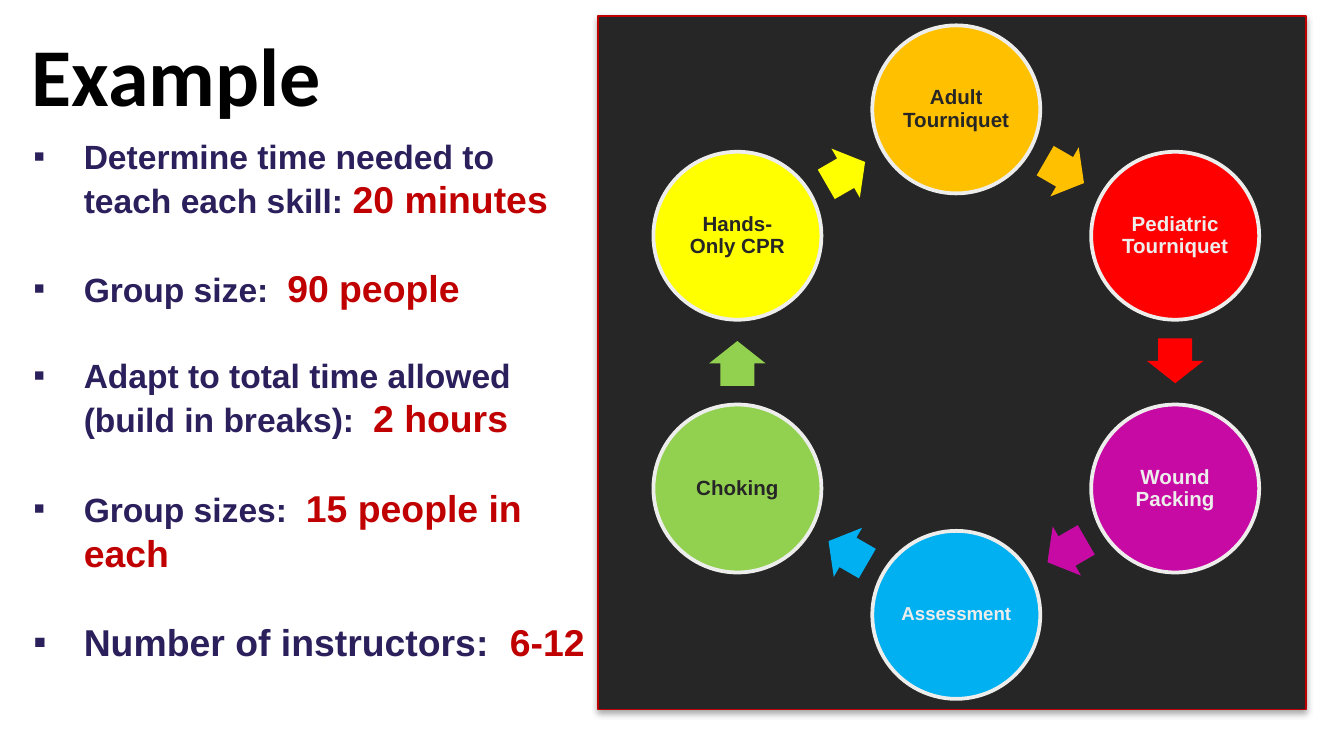
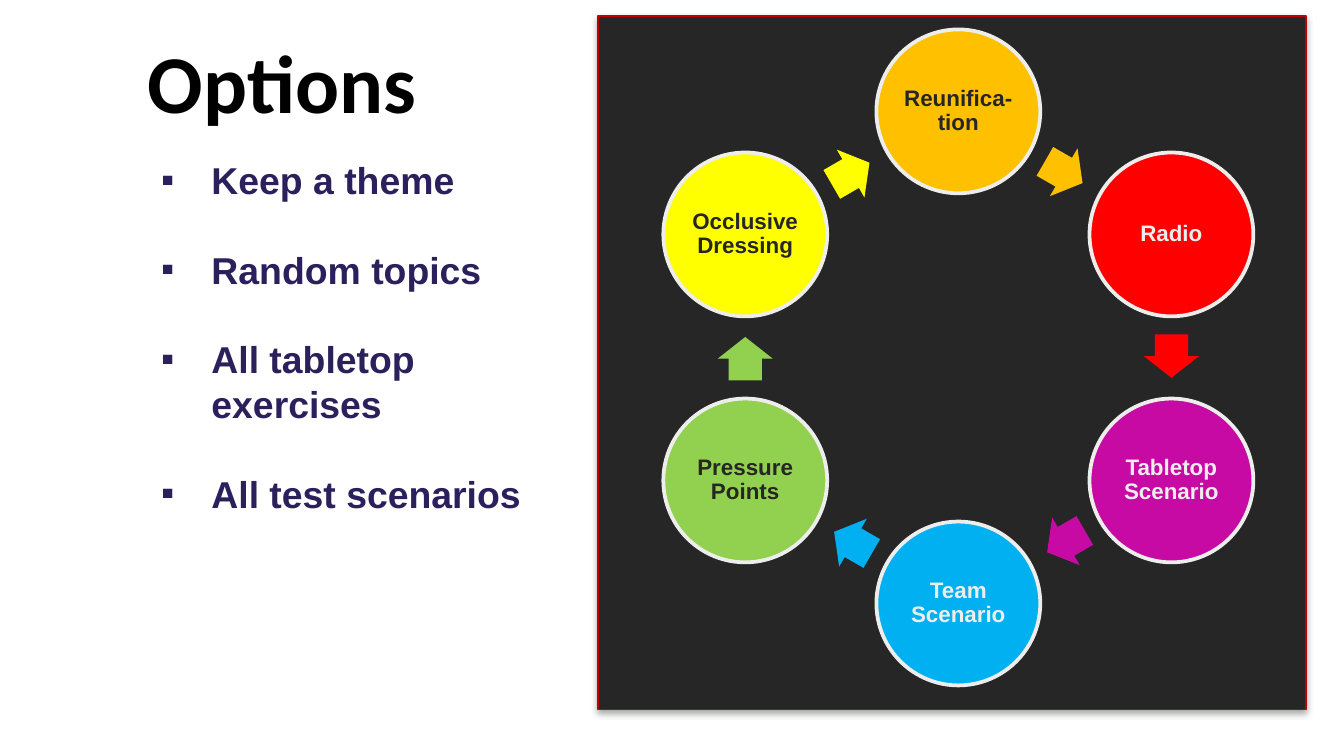
from dataclasses import dataclass
from math import cos, radians, sin

from lxml.etree import SubElement as Sub
from pptx import Presentation
from pptx.dml.color import RGBColor as Rgb
from pptx.enum.shapes import MSO_SHAPE as Kind
from pptx.enum.text import MSO_ANCHOR as Anchor, MSO_AUTO_SIZE as Fit, PP_ALIGN as Align
from pptx.oxml.ns import qn
from pptx.util import Pt


@dataclass(frozen=True)
class Theme:
    head: str = "Calibri"
    body: str = "Arial"
    black: str = "000000"
    navy: str = "2B205C"
    red: str = "C00000"
    dark: str = "262626"
    light: str = "EDEDEC"
    title: int = 44
    big: int = 20
    mid: int = 18
    gap: int = 24
    indent: int = 27
    # Circle fill and the colour of its text, clockwise from the top
    wheel: tuple = (("FFC000", dark), ("FF0000", light), ("C80AA4", light),
                    ("00B0F0", light), ("92D050", dark), ("FFFF00", dark))


T = Theme()
PANEL = (320.4, 8.6, 379.4, 371.5)


def paint(shape, fill, line=None, width=1):
    """Set the fill and line of a shape and drop its shadow."""
    shape.shadow.inherit = False
    shape.fill.solid()
    shape.fill.fore_color.rgb = Rgb.from_string(fill)
    if line:
        shape.line.color.rgb = Rgb.from_string(line)
        shape.line.width = Pt(width)
    else:
        shape.line.fill.background()


def shade(shape):
    """Give a shape a soft shadow straight below it."""
    fx = shape._element.spPr.find(qn("a:effectLst"))
    drop = Sub(fx, qn("a:outerShdw"), blurRad="40000", dist="23000",
               dir="5400000", rotWithShape="0")
    tint = Sub(drop, qn("a:srgbClr"), val=T.black)
    Sub(tint, qn("a:alpha"), val="35000")


def mark(para):
    """Add a hanging square bullet."""
    props = para._p.get_or_add_pPr()
    props.set("marL", str(Pt(T.indent)))
    props.set("indent", str(-Pt(T.indent)))
    Sub(props, qn("a:buFont"), typeface=T.body)
    Sub(props, qn("a:buChar"), char="▪")


def write(shape, paras, size, color, font=T.body, align=Align.CENTER,
          anchor=Anchor.MIDDLE, inset=None, space=None, gap=0, bullet=False):
    """Fill a shape with paragraphs, each a list of (text, size, colour) runs."""
    frame = shape.text_frame
    frame.word_wrap = True
    frame.vertical_anchor = anchor
    if inset is not None:
        frame.margin_left = frame.margin_right = Pt(inset)
        frame.margin_top = frame.margin_bottom = Pt(inset)
    for i, runs in enumerate(paras):
        para = frame.add_paragraph() if i else frame.paragraphs[0]
        if bullet:
            mark(para)
        para.alignment = align
        if space:
            para.line_spacing = space
        if i and gap:
            para.space_before = Pt(gap)
        for text, *style in runs:
            own, tint = style or (size, color)
            run = para.add_run()
            run.text = text
            run.font.name = font
            run.font.bold = True
            run.font.size = Pt(own)
            run.font.color.rgb = Rgb.from_string(tint)


def place(home, kind, x, y, w, h):
    return home.add_shape(kind, Pt(x), Pt(y), Pt(w), Pt(h))


def title(slide, box, text):
    shape = slide.shapes.add_textbox(*map(Pt, box))
    write(shape, [[(text,)]], T.title, T.black, font=T.head)


def points(slide, box, paras):
    shape = slide.shapes.add_textbox(*map(Pt, box))
    write(shape, paras, T.big, T.navy, align=Align.LEFT, anchor=Anchor.TOP,
          gap=T.gap, bullet=True)
    shape.text_frame.auto_size = Fit.SHAPE_TO_FIT_TEXT


def cycle(slide, box, names, mid, radius, size, arrow, font):
    """Draw the dark panel and its ring; mid is relative to the panel."""
    left, top, *_ = box
    panel = place(slide.shapes, Kind.RECTANGLE, *box)
    paint(panel, T.dark, T.red, 0.75)
    shade(panel)

    ring = slide.shapes.add_group_shape().shapes
    cx, cy = left + mid[0], top + mid[1]
    step = 360 / len(names)
    reach = radius * cos(radians(step / 2))
    wide, high = arrow
    back = 0.7  # arrows sit slightly behind the midpoint
    for i, (name, (fill, ink)) in enumerate(zip(names, T.wheel)):
        # Circle
        turn = radians(i * step)
        x, y = cx + radius * sin(turn), cy - radius * cos(turn)
        disc = place(ring, Kind.OVAL, x - size / 2, y - size / 2, size, size)
        paint(disc, fill, T.light, 2)
        text, pt = name if isinstance(name, tuple) else (name, font)
        write(disc, [[(text,)]], pt, ink, inset=1.2, space=0.9)

        # Arrow to the next circle
        angle = (i + 0.5) * step
        turn = radians(angle)
        x = cx + reach * sin(turn) - back * cos(turn)
        y = cy - reach * cos(turn) - back * sin(turn)
        tip = place(ring, Kind.RIGHT_ARROW, x - wide / 2, y - high / 2, wide, high)
        tip.adjustments[0], tip.adjustments[1] = 0.6, 0.5
        tip.rotation = angle
        paint(tip, fill)


def fact(label, value, size=T.mid):
    return [(label, size, T.navy), (value, T.big, T.red)]


def example(slide):
    cycle(slide, PANEL,
          ["Adult Tourniquet", "Pediatric Tourniquet", "Wound Packing",
           ("Assessment", 10), "Choking", "Hands-Only CPR"],
          mid=(191.9, 185.4), radius=135.4, size=90, arrow=(24, 30.4), font=11)
    title(slide, (0, 5.8, 189.4, 67.7), "Example")
    points(slide, (10.8, 69.1, 309.6, 293), [
        fact("Determine time needed to teach each skill: ", "20 minutes"),
        fact("Group size:  ", "90 people"),
        fact("Adapt to total time allowed (build in breaks):  ", "2 hours"),
        fact("Group sizes:  ", "15 people in each"),
        fact("Number of instructors:  ", "6-12", T.big),
    ])


def options(slide):
    title(slide, (5, 9.4, 292.3, 67.7), "Options")
    cycle(slide, PANEL,
          ["Reunifica-tion", "Radio", "Tabletop Scenario",
           "Team Scenario", "Pressure Points", "Occlusive Dressing"],
          mid=(193, 182.9), radius=131.8, size=87.8, arrow=(23.3, 29.6), font=12)
    lines = ["Keep a theme", "Random topics", "All tabletop exercises",
             "All test scenarios"]
    points(slide, (79.2, 80.6, 235.4, 200.9), [[(line,)] for line in lines])


def main():
    deck = Presentation()
    deck.slide_width, deck.slide_height = Pt(720), Pt(405)
    for build in (example, options):
        build(deck.slides.add_slide(deck.slide_layouts[6]))
    deck.save("out.pptx")


if __name__ == "__main__":
    main()
